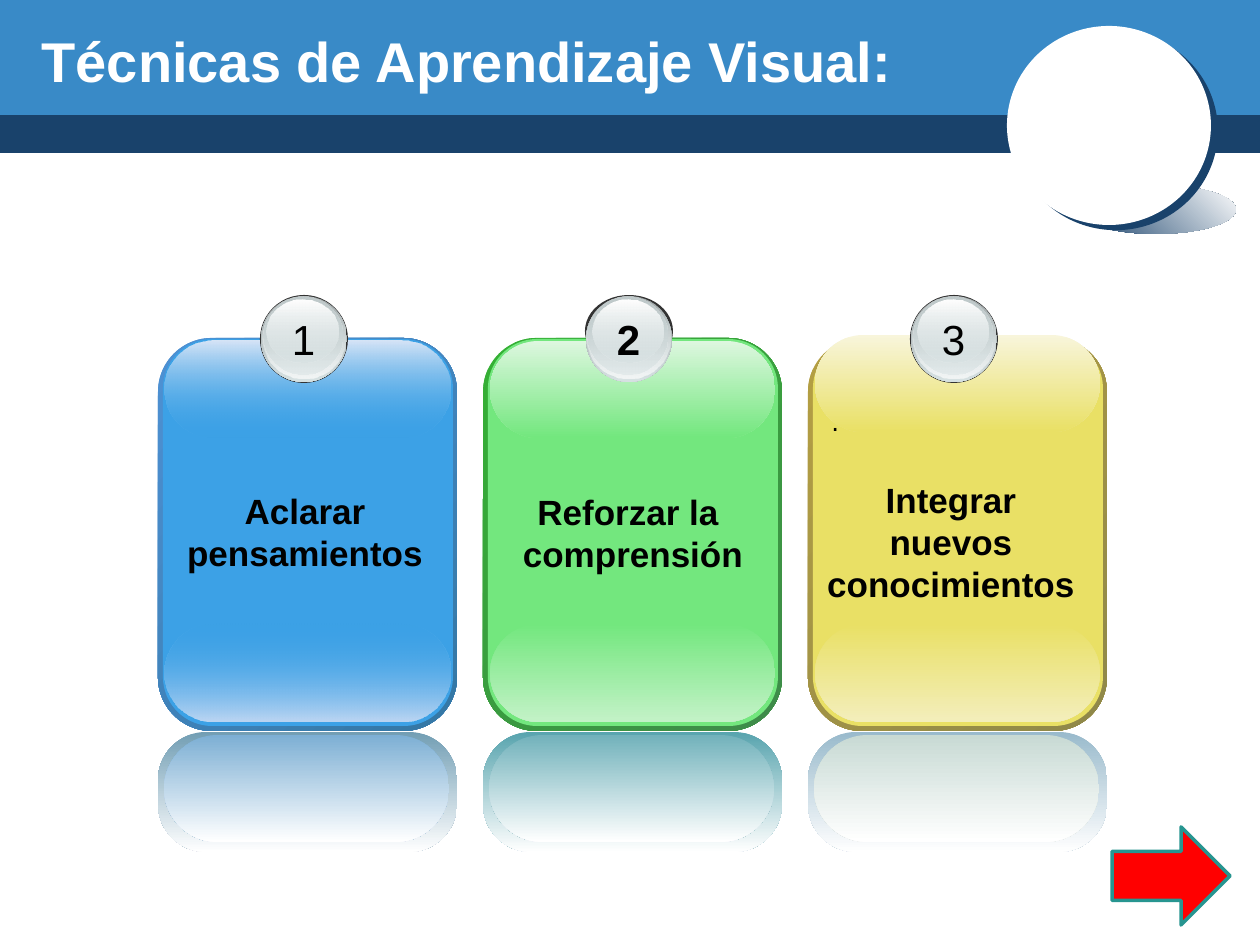
from pptx import Presentation
from pptx.dml.color import RGBColor
from pptx.enum.shapes import MSO_SHAPE
from pptx.enum.text import MSO_ANCHOR, PP_ALIGN
from pptx.oxml import parse_xml
from pptx.oxml.ns import nsdecls, qn
from pptx.util import Pt

RECT, OVAL = MSO_SHAPE.RECTANGLE, MSO_SHAPE.OVAL
ROUND, ARROW = MSO_SHAPE.ROUNDED_RECTANGLE, MSO_SHAPE.RIGHT_ARROW
LEFT, CENTER = PP_ALIGN.LEFT, PP_ALIGN.CENTER
MIDDLE = MSO_ANCHOR.MIDDLE

SCALE = 914400 / 126
NAVY, BLUE, WHITE, BLACK = "19426B", "398AC7", "FFFFFF", "000000"
PITCH = 325

# A colour is a hex string, with its opacity in percent after a slash if needed.
PANELS = [
    dict(num="1", bold=False, frame=("4E91D4", "3477A4"), body="3CA1E6",
         low=("3CA1E6/0", "BDD6F3"), high=("D7E5F7", "3CA1E6/0"), top=341,
         outer="729EB4", inner="7DAFD4", disc=88,
         text=["Aclarar pensamientos"], box=(163, 483, 284, 97)),
    dict(num="2", bold=True, frame=("34B034", "3F8B4A"), body="73E77E",
         low=("73E77E", "C3F2C7"), high=("DDF7DF", "73E77E"), top=341,
         outer="58A4AE", inner="72B2BB", disc=72,
         text=["Reforzar la ", "comprensión"], box=(488, 484, 290, 97)),
    dict(num="3", bold=False, frame=("B59F43", "8F8849"), body="E9E065",
         low=("E9E065", "F3EEBB"), high=("F8F5DB", "E9E065"), top=335,
         outer="99BACC", inner="C8DAD4", disc=88,
         text=["Integrar nuevos", "conocimientos"], box=(808, 472, 286, 140)),
]


def px(n):
    return round(n * SCALE)


def rgb(code):
    return RGBColor.from_string(code)


def place(item, box):
    item.left, item.top, item.width, item.height = map(px, box)


def blend(shape, ends, angle):
    """Fill a shape with a two-colour linear gradient."""
    stops = ""
    for pos, end in zip((0, 100000), ends):
        code, _, alpha = end.partition("/")
        clear = f'<a:alpha val="{alpha}000"/>' if alpha else ""
        stops += f'<a:gs pos="{pos}"><a:srgbClr val="{code}">{clear}</a:srgbClr></a:gs>'
    shape.fill.background()
    props = shape._element.spPr
    props.replace(props.find(qn("a:noFill")), parse_xml(
        f'<a:gradFill {nsdecls("a")} rotWithShape="1"><a:gsLst>{stops}</a:gsLst>'
        f'<a:lin ang="{angle * 60000}" scaled="0"/></a:gradFill>'))


def draw(shapes, kind, box, fill, angle=90, bend=None):
    """Add a borderless shape; a pair of colours makes a gradient."""
    shape = shapes.add_shape(kind, *map(px, box))
    shape.shadow.inherit = False
    shape.line.fill.background()
    if isinstance(fill, str):
        shape.fill.solid()
        shape.fill.fore_color.rgb = rgb(fill)
    else:
        blend(shape, fill, angle)
    if bend is not None:
        shape.adjustments[0] = bend
    return shape


def write(item, lines, size, color=BLACK, bold=False, align=CENTER, face="Arial"):
    frame = item.text_frame
    frame.word_wrap = True
    frame.text = "\n".join(lines)
    for para in frame.paragraphs:
        para.alignment = align
        font = para.font
        font.name, font.size, font.bold = face, Pt(size), bold
        font.color.rgb = rgb(color)


def label(shapes, box, lines, size, **style):
    item = shapes.add_textbox(*map(px, box))
    write(item, lines, size, **style)


def header(slide):
    shapes = slide.shapes
    draw(shapes, RECT, (0, 110, 1260, 43), NAVY)
    draw(shapes, RECT, (0, 0, 1260, 115), BLUE)

    # Disc with its cast shade and hard shadow
    draw(shapes, OVAL, (1076, 185, 160, 49), (NAVY, WHITE), angle=315)
    disc = draw(shapes, OVAL, (1007, 26, 204, 199), WHITE)
    disc._element.spPr.find(qn("a:effectLst")).append(parse_xml(
        f'<a:outerShdw {nsdecls("a")} blurRad="0" dist="{Pt(5)}" dir="{37 * 60000}" '
        f'algn="ctr" rotWithShape="0"><a:srgbClr val="{NAVY}"/></a:outerShdw>'))

    # Title, brought in front of the bands
    title = shapes.title
    place(title, (29, 20, 925, 81))
    title.text_frame.vertical_anchor = MIDDLE
    write(title, ["Técnicas de Aprendizaje Visual:"], 32,
          color=WHITE, bold=True, align=LEFT)
    shapes._spTree.append(title._element)


def ball(shapes, x, y, data):
    """Glossy numbered ball, layered from back to front."""
    draw(shapes, OVAL, (x, y, 88, data["disc"]), "333333")
    layers = [
        (1, 1, 86, 86, ("99A1A2", "D6E1E2")),
        (2, 1, 83, 83, ("D6E1E2/0", "F2F5F5")),
        (3, 2, 79, 78, ("C1CBCC", "D6E1E2/48")),
        (7, 5, 71, 63, ("FFFFFF", "D6E1E2/38")),
    ]
    for dx, dy, w, h, fill in layers:
        draw(shapes, OVAL, (x + dx, y + dy, w, h), fill)
    label(shapes, (x + 19, y + 12, 49, 63), [data["num"]], 24, bold=data["bold"])


def panel(slide, x, data):
    shapes = slide.shapes.add_group_shape().shapes
    # Card with light at both ends
    draw(shapes, ROUND, (x, 338, 299, 393), data["frame"], angle=45, bend=0.18)
    draw(shapes, ROUND, (x + 5, 339, 290, 387), data["body"], bend=0.17)
    draw(shapes, ROUND, (x + 7, 624, 285, 98), data["low"], bend=0.5)
    draw(shapes, ROUND, (x + 7, data["top"], 285, 97), data["high"], bend=0.5)
    # Reflection
    draw(shapes, ROUND, (x, 732, 299, 120), (data["outer"], WHITE), bend=0.4)
    draw(shapes, ROUND, (x + 6, 735, 285, 107), (data["inner"], WHITE), bend=0.5)
    # Number and caption
    ball(shapes, x + 102, 295, data)
    label(shapes, data["box"], data["text"], 20, bold=True)


def main():
    deck = Presentation()
    deck.slide_width, deck.slide_height = px(1260), px(945)
    slide = deck.slides.add_slide(deck.slide_layouts[5])

    header(slide)
    for i, data in enumerate(PANELS):
        panel(slide, 158 + i * PITCH, data)
    label(slide.shapes, (819, 401, 284, 43), ["."], 14, align=LEFT, face="DejaVu Sans")

    # Arrow to the next slide
    arrow = draw(slide.shapes, ARROW, (1112, 827, 118, 98), "FF0000")
    arrow.line.color.rgb = rgb("279590")
    arrow.line.width = Pt(2)

    deck.save("out.pptx")


if __name__ == "__main__":
    main()
